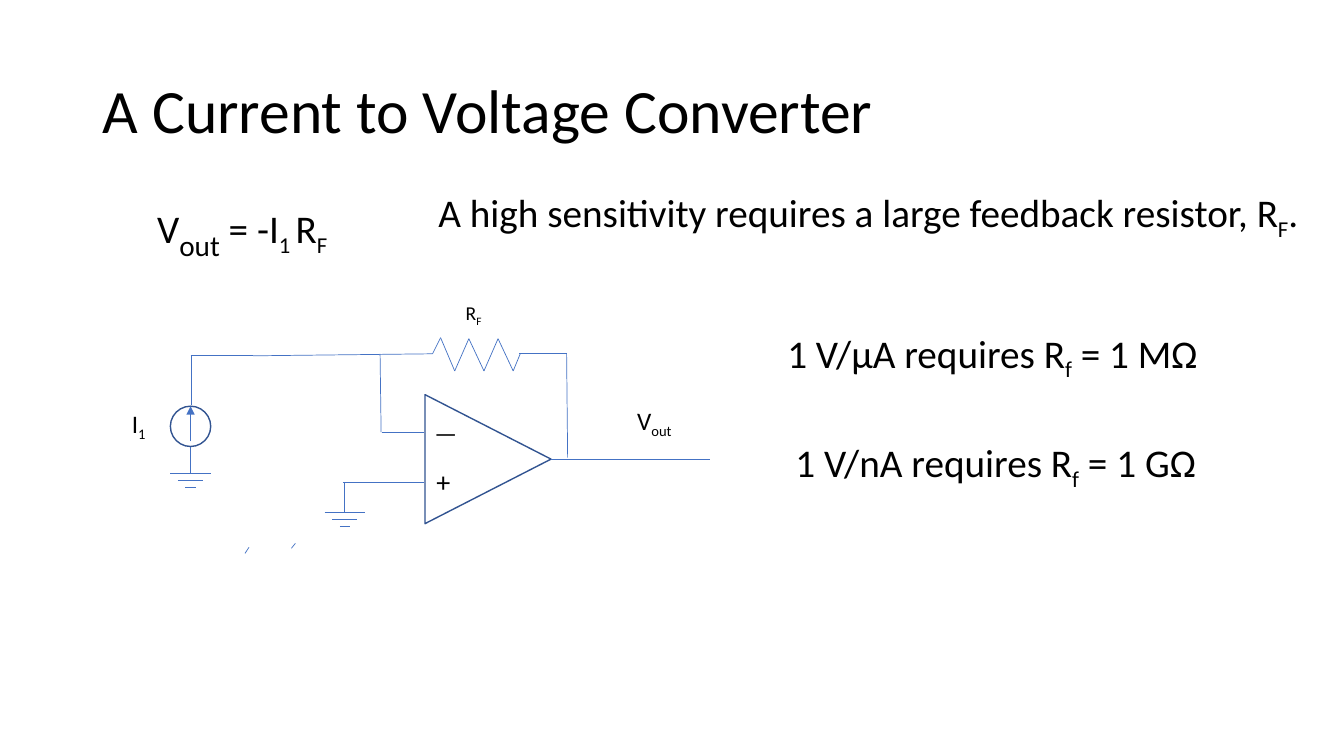
from itertools import pairwise

from lxml import etree
from pptx import Presentation
from pptx.dml.color import RGBColor
from pptx.enum.shapes import MSO_CONNECTOR, MSO_SHAPE
from pptx.enum.text import MSO_ANCHOR
from pptx.oxml.ns import qn
from pptx.util import Inches, Pt

STRAIGHT = MSO_CONNECTOR.STRAIGHT
OVAL = MSO_SHAPE.OVAL
TRIANGLE = MSO_SHAPE.ISOSCELES_TRIANGLE
TOP, MIDDLE = MSO_ANCHOR.TOP, MSO_ANCHOR.MIDDLE

FONT = "Calibri"
COLORS = {"text": "000000", "wire": "4472C4", "outline": "325491"}


def color(name):
    return RGBColor.from_string(COLORS[name])


def add_text(slide, box, parts, size, sub_size=None, anchor=TOP, spacing=None):
    """Write one paragraph whose parts alternate between normal and subscript."""
    text_box = slide.shapes.add_textbox(*map(Inches, box))
    frame = text_box.text_frame
    frame.word_wrap = True
    frame.margin_right = 0
    frame.vertical_anchor = anchor
    paragraph = frame.paragraphs[0]
    if spacing:
        paragraph.line_spacing = spacing
    for index, part in enumerate(parts):
        run = paragraph.add_run()
        run.text = part
        run.font.name = FONT
        run.font.size = Pt(size)
        run.font.color.rgb = color("text")
        if index % 2:
            run.font.size = Pt(sub_size if sub_size and index == 1 else size)
            run.font._element.set("baseline", "-25000")


def add_wire(slide, origin, start, end, arrow=False):
    left, top = origin
    wire = slide.shapes.add_connector(
        STRAIGHT,
        Inches(left + start[0]), Inches(top + start[1]),
        Inches(left + end[0]), Inches(top + end[1]),
    )
    wire.line.color.rgb = color("wire")
    wire.line.width = Pt(0.5)
    if arrow:
        etree.SubElement(wire.line._get_or_add_ln(), qn("a:tailEnd"), type="triangle")
    etree.SubElement(wire._element.spPr, qn("a:effectLst"))


def add_outline(slide, kind, origin, box):
    left, top = origin
    x, y, width, height = box
    shape = slide.shapes.add_shape(
        kind, Inches(left + x), Inches(top + y), Inches(width), Inches(height)
    )
    shape.shadow.inherit = False
    shape.fill.background()
    shape.line.color.rgb = color("outline")
    shape.line.width = Pt(1)
    return shape


def add_ground(slide, origin, x, stem_top, y):
    """Draw a stem down to three shrinking bars centred on x."""
    add_wire(slide, origin, (x, y), (x, stem_top))
    for row, width in enumerate((0.4, 0.25, 0.1)):
        bar_y = y + row * 0.07
        add_wire(slide, origin, (x - width / 2, bar_y), (x + width / 2, bar_y))


def add_resistor(slide, origin):
    zigzag = [
        (3.09, 0.61), (3.17, 0.45), (3.31, 0.78), (3.45, 0.46),
        (3.6, 0.78), (3.74, 0.46), (3.89, 0.78), (3.96, 0.61),
    ]
    for start, end in pairwise(zigzag):
        add_wire(slide, origin, start, end)


def add_current_source(slide, origin):
    add_outline(slide, OVAL, origin, (0.49, 1.13, 0.4, 0.4))
    add_wire(slide, origin, (0.69, 1.48), (0.69, 1.13), arrow=True)
    add_ground(slide, origin, 0.69, 1.53, 1.8)


def add_circuit(slide, origin):
    left, top = origin
    add_resistor(slide, origin)
    add_current_source(slide, origin)
    amplifier = add_outline(slide, TRIANGLE, origin, (3.0, 1.03, 1.28, 1.25))
    amplifier.rotation = 90
    add_ground(slide, origin, 2.22, 1.89, 2.18)

    wires = [
        ((0.7, 1.12), (0.7, 0.63)),      # source to input rail
        ((0.69, 0.63), (1.31, 0.63)),
        ((1.31, 0.63), (3.09, 0.61)),
        ((2.57, 0.61), (2.58, 1.39)),    # rail to inverting input
        ((2.59, 1.39), (3.01, 1.39)),
        ((2.2, 1.89), (3.01, 1.89)),     # ground to other input
        ((3.95, 0.61), (4.42, 0.61)),    # feedback to output
        ((4.42, 0.61), (4.43, 1.64)),
        ((4.27, 1.66), (5.84, 1.66)),
        ((1.23, 2.59), (1.27, 2.53)),    # loose ticks below
        ((1.69, 2.54), (1.73, 2.49)),
    ]
    for start, end in wires:
        add_wire(slide, origin, start, end)

    labels = [
        (3.32, 0.04, 0.57, 0.34, ["R", "F"], 14),
        (0.01, 1.1, 0.57, 0.4, ["I", "1"], 18),
        (5.02, 1.07, 0.57, 0.4, ["V", "out"], 18),
        (3.01, 1.19, 0.4, 0.4, ["—"], 18),
        (3.03, 1.66, 0.34, 0.44, ["+"], 20),
    ]
    for x, y, width, height, parts, size in labels:
        add_text(slide, (left + x, top + y, width, height), parts, size)


def add_statements(slide):
    statements = [
        ((4.25, 1.83, 8.89, 0.8),
         ["A high sensitivity requires a large feedback resistor, R", "F", "."], None),
        ((1.46, 1.88, 2.24, 0.59), ["V", "out", " = -I", "1 ", "R", "F"], 36),
        ((7.71, 3.22, 5.08, 0.8), ["1 V/μA requires R", "f", " = 1 MΩ"], None),
        ((7.79, 4.31, 5.08, 0.8), ["1 V/nA requires R", "f", " = 1 GΩ"], None),
    ]
    for box, parts, sub_size in statements:
        add_text(slide, box, parts, 28, sub_size, spacing=0.9)


def main():
    presentation = Presentation()
    presentation.slide_width = Inches(13.33)
    presentation.slide_height = Inches(7.5)
    slide = presentation.slides.add_slide(presentation.slide_layouts[6])
    add_text(slide, (0.92, 0.4, 11.5, 1.45), ["A Current to Voltage Converter"], 44,
             anchor=MIDDLE, spacing=0.9)
    add_circuit(slide, (1.2, 2.9))
    add_statements(slide)
    presentation.save("out.pptx")


if __name__ == "__main__":
    main()
